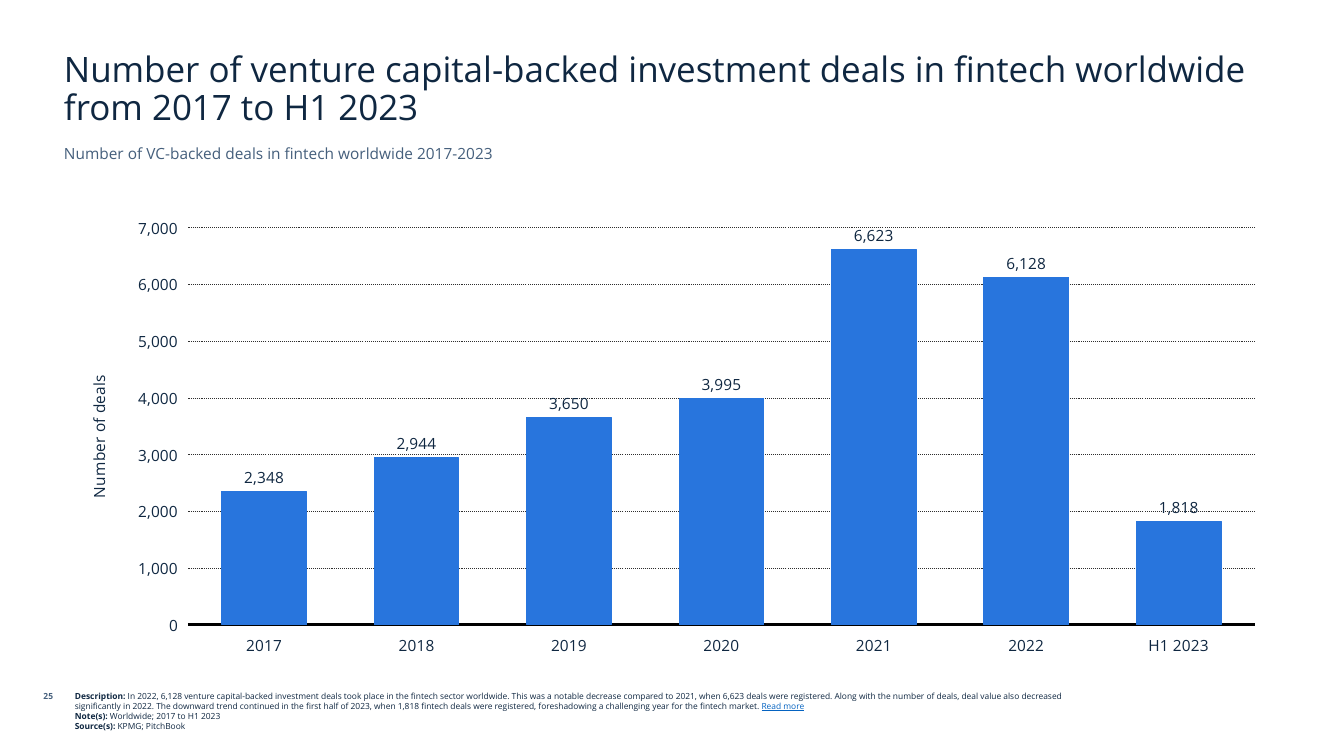
from lxml import etree
from pptx import Presentation
from pptx.chart.data import CategoryChartData
from pptx.dml.color import RGBColor
from pptx.enum.chart import XL_CHART_TYPE, XL_LABEL_POSITION, XL_TICK_LABEL_POSITION, XL_TICK_MARK
from pptx.enum.dml import MSO_LINE
from pptx.enum.text import MSO_ANCHOR, PP_ALIGN
from pptx.oxml.ns import qn
from pptx.util import Pt

COLUMN = XL_CHART_TYPE.COLUMN_CLUSTERED
OUTSIDE_END = XL_LABEL_POSITION.OUTSIDE_END
LOW = XL_TICK_LABEL_POSITION.LOW
NO_TICK = XL_TICK_MARK.NONE
DOTTED = MSO_LINE.ROUND_DOT
TOP, BOTTOM = MSO_ANCHOR.TOP, MSO_ANCHOR.BOTTOM
LEFT, RIGHT = PP_ALIGN.LEFT, PP_ALIGN.RIGHT

NAVY = RGBColor(0x0F, 0x27, 0x41)
SLATE = RGBColor(0x45, 0x5F, 0x7C)
BLUE = RGBColor(0x28, 0x75, 0xDD)
LINK = RGBColor(0x05, 0x63, 0xC1)
GRID = RGBColor(0x2F, 0x2F, 0x2F)
BLACK = RGBColor(0, 0, 0)
FONT = "Open Sans"
PX_PER_INCH = 100.8

CHART_BOX = (65, 208, 1215, 458)
PLOT_BOX = (188, 228, 1067, 397)
DEALS = {
    "2017": 2348,
    "2018": 2944,
    "2019": 3650,
    "2020": 3995,
    "2021": 6623,
    "2022": 6128,
    "H1 2023": 1818,
}
DESCRIPTION = (
    "In 2022, 6,128 venture capital-backed investment deals took place in the fintech sector "
    "worldwide. This was a notable decrease compared to 2021, when 6,623 deals were registered. "
    "Along with the number of deals, deal value also decreased significantly in 2022. The downward "
    "trend continued in the first half of 2023, when 1,818 fintech deals were registered, "
    "foreshadowing a challenging year for the fintech market. "
)


def px(length):
    return round(length * 914400 / PX_PER_INCH)


def style_font(font, size, color=NAVY, bold=False, underline=False):
    font.name = FONT
    font.size = Pt(size)
    font.color.rgb = color
    font.bold = bold
    font.underline = underline


def add_text(slide, box, paragraphs, size, color=NAVY, bold=False,
             align=LEFT, anchor=TOP, line_spacing=None):
    frame = slide.shapes.add_textbox(*map(px, box)).text_frame
    frame.word_wrap = True
    frame.vertical_anchor = anchor
    for index, runs in enumerate(paragraphs):
        paragraph = frame.paragraphs[0] if index == 0 else frame.add_paragraph()
        paragraph.alignment = align
        paragraph.line_spacing = line_spacing
        for text, changes in runs:
            run = paragraph.add_run()
            run.text = text
            style_font(run.font, **({"size": size, "color": color, "bold": bold} | changes))


def place_plot(chart):
    plot_area = chart.plots[0]._element.getparent()
    for old_layout in plot_area.findall(qn("c:layout")):
        plot_area.remove(old_layout)
    layout = etree.Element(qn("c:layout"))
    manual = etree.SubElement(layout, qn("c:manualLayout"))
    left, top, width, height = CHART_BOX
    plot_left, plot_top, plot_width, plot_height = PLOT_BOX
    settings = {
        "layoutTarget": "inner",
        "xMode": "edge",
        "yMode": "edge",
        "x": (plot_left - left) / width,
        "y": (plot_top - top) / height,
        "w": plot_width / width,
        "h": plot_height / height,
    }
    for name, value in settings.items():
        etree.SubElement(manual, qn(f"c:{name}")).set("val", str(value))
    plot_area.insert(0, layout)


def style_axis(axis):
    axis.major_tick_mark = NO_TICK
    axis.minor_tick_mark = NO_TICK
    axis.tick_label_position = LOW
    style_font(axis.tick_labels.font, 11)


def style_value_axis(axis):
    style_axis(axis)
    axis.minimum_scale = 0
    axis.maximum_scale = 7000
    axis.major_unit = 1000
    axis.tick_labels.number_format = "#,##0"
    axis.tick_labels.number_format_is_linked = False
    axis.format.line.fill.background()
    grid = axis.major_gridlines.format.line
    grid.color.rgb = GRID
    grid.width = Pt(0.75)
    grid.dash_style = DOTTED
    frame = axis.axis_title.text_frame
    frame.text = "Number of deals"
    style_font(frame.paragraphs[0].runs[0].font, 11)
    frame._txBody.bodyPr.set("rot", "-5400000")


def style_columns(plot):
    plot.gap_width = 80
    plot.overlap = -30
    plot.vary_by_categories = False
    series = plot.series[0]
    series.format.fill.solid()
    series.format.fill.fore_color.rgb = BLUE
    series.format.line.color.rgb = BLUE
    series.format.line.width = Pt(0.75)
    labels = series.data_labels
    labels.show_value = True
    labels.position = OUTSIDE_END
    labels.number_format = "#,##0"
    labels.number_format_is_linked = False
    style_font(labels.font, 11)


def add_deals_chart(slide):
    data = CategoryChartData(number_format="#,##0")
    data.categories = list(DEALS)
    data.add_series("Series 1", DEALS.values())
    chart = slide.shapes.add_chart(COLUMN, *map(px, CHART_BOX), data).chart
    chart.has_legend = False
    chart.has_title = False
    style_font(chart.font, 11)
    place_plot(chart)
    style_columns(chart.plots[0])
    style_value_axis(chart.value_axis)
    style_axis(chart.category_axis)
    baseline = chart.category_axis.format.line
    baseline.color.rgb = BLACK
    baseline.width = Pt(2)


def main():
    presentation = Presentation()
    presentation.slide_width = px(1344)
    presentation.slide_height = px(756)
    slide = presentation.slides.add_slide(presentation.slide_layouts[6])

    title = "Number of venture capital-backed investment deals in fintech worldwide from 2017 to H1 2023"
    subtitle = "Number of VC-backed deals in fintech worldwide 2017-2023"
    heading = {"bold": True}
    footer = [
        [("Description: ", heading), (DESCRIPTION, {}),
         ("Read more", {"color": LINK, "underline": True})],
        [("Note(s): ", heading), ("Worldwide; 2017 to H1 2023", {})],
        [("Source(s): ", heading), ("KPMG; PitchBook", {})],
    ]

    add_text(slide, (65, 686, 1055, 58), footer, 6)
    add_deals_chart(slide)
    add_text(slide, (0, 686, 63, 30), [[("25", {})]], 6, color=SLATE, bold=True, align=RIGHT)
    add_text(slide, (54, 46, 1234, 87), [[(title, {})]], 25, anchor=BOTTOM, line_spacing=0.9)
    add_text(slide, (54, 139, 1234, 34), [[(subtitle, {})]], 11, color=SLATE)

    presentation.save("out.pptx")


if __name__ == "__main__":
    main()
